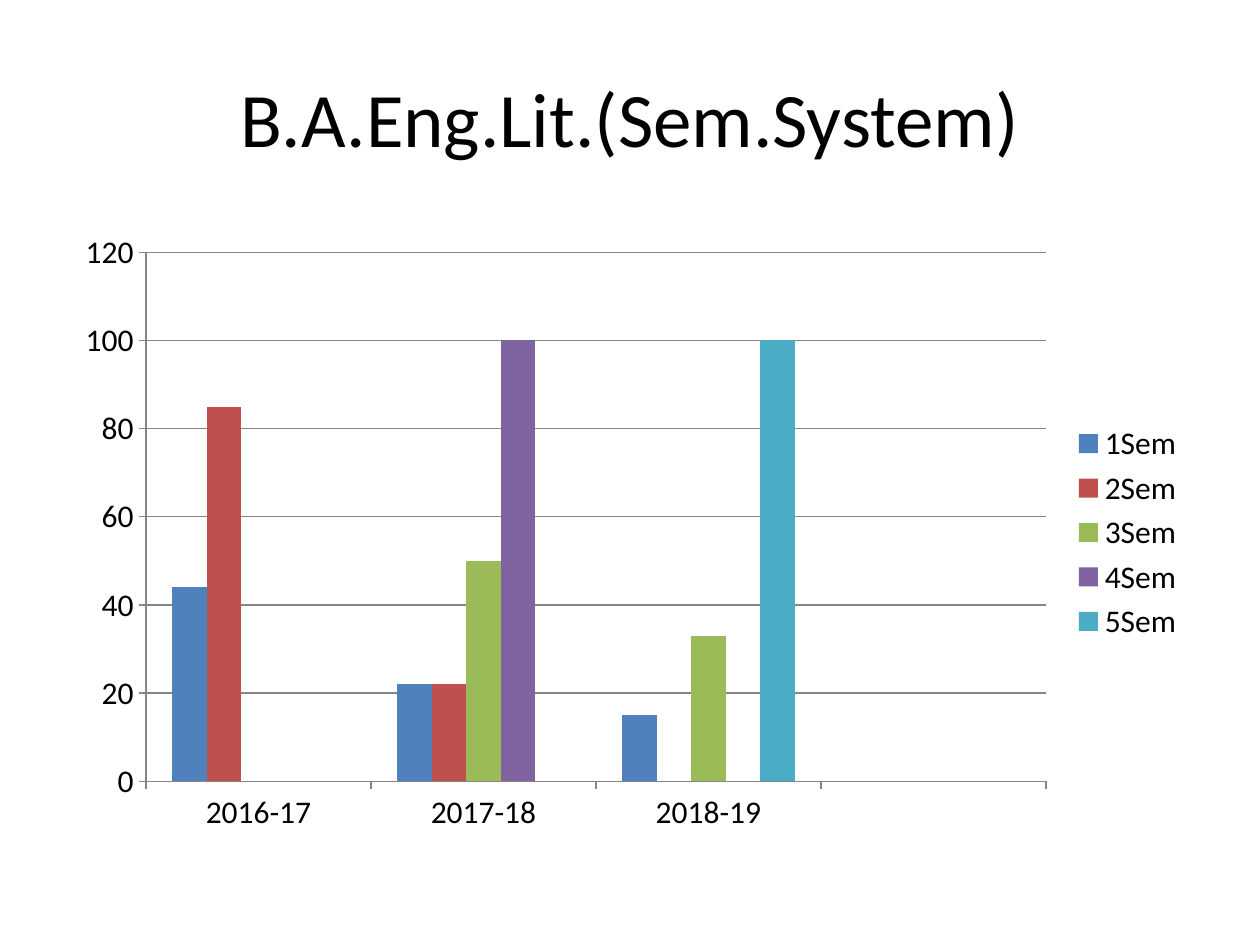
from pptx import Presentation
from pptx.chart.data import CategoryChartData
from pptx.dml.color import RGBColor
from pptx.enum.chart import XL_CHART_TYPE, XL_LEGEND_POSITION, XL_TICK_MARK
from pptx.enum.text import MSO_ANCHOR, PP_ALIGN
from pptx.util import Cm, Pt

TITLE = "B.A.Eng.Lit.(Sem.System)"
YEARS = ["2016-17", "2017-18", "2018-19", ""]
MARKS = {
    "1Sem": (44, 22, 15, None),
    "2Sem": (85, 22, None, None),
    "3Sem": (None, 50, 33, None),
    "4Sem": (None, 100, None, None),
    "5Sem": (None, None, 100, None),
}
THEME = {
    "font": "Calibri",
    "title": Pt(44),
    "label": Pt(18),
    "line": Pt(0.75),
    "ink": RGBColor.from_string("000000"),
    "rule": RGBColor.from_string("868686"),
    "bars": ["4F81BD", "C0504D", "9BBB59", "8064A2", "4BACC6"],
}
WIDE, HIGH, EDGE = Cm(25.4), Cm(19.05), Cm(1.27)
SPAN = WIDE - 2 * EDGE


def style(font, size):
    font.name = THEME["font"]
    font.size = size
    font.color.rgb = THEME["ink"]


def rule(line):
    line.color.rgb = THEME["rule"]
    line.width = THEME["line"]


def add_title(slide):
    title = slide.shapes.title
    title.left, title.top, title.width, title.height = EDGE, Cm(0.76), SPAN, Cm(3.18)
    frame = title.text_frame
    frame.text = TITLE
    frame.vertical_anchor = MSO_ANCHOR.MIDDLE
    para = frame.paragraphs[0]
    para.alignment = PP_ALIGN.CENTER
    style(para.runs[0].font, THEME["title"])


def add_marks(slide):
    data = CategoryChartData()
    data.categories = YEARS
    for name, marks in MARKS.items():
        data.add_series(name, marks)
    chart = slide.shapes.add_chart(
        XL_CHART_TYPE.COLUMN_CLUSTERED, EDGE, Cm(4.45), SPAN, Cm(12.57), data
    ).chart
    style(chart.font, THEME["label"])
    chart.has_title = False
    chart.has_legend = True
    chart.legend.position = XL_LEGEND_POSITION.RIGHT
    chart.legend.include_in_layout = False

    plot = chart.plots[0]
    plot.gap_width, plot.overlap = 150, 0
    plot.vary_by_categories = False
    for bar, tint in zip(plot.series, THEME["bars"]):
        bar.format.fill.solid()
        bar.format.fill.fore_color.rgb = RGBColor.from_string(tint)

    for axis in (chart.category_axis, chart.value_axis):
        axis.major_tick_mark = XL_TICK_MARK.OUTSIDE
        axis.minor_tick_mark = XL_TICK_MARK.NONE
        rule(axis.format.line)
    scale = chart.value_axis
    scale.minimum_scale, scale.maximum_scale, scale.major_unit = 0, 120, 20
    scale.has_major_gridlines = True
    rule(scale.major_gridlines.format.line)


def main():
    deck = Presentation()
    deck.slide_width, deck.slide_height = WIDE, HIGH
    slide = deck.slides.add_slide(deck.slide_layouts[5])
    add_title(slide)
    add_marks(slide)
    deck.save("out.pptx")


if __name__ == "__main__":
    main()
